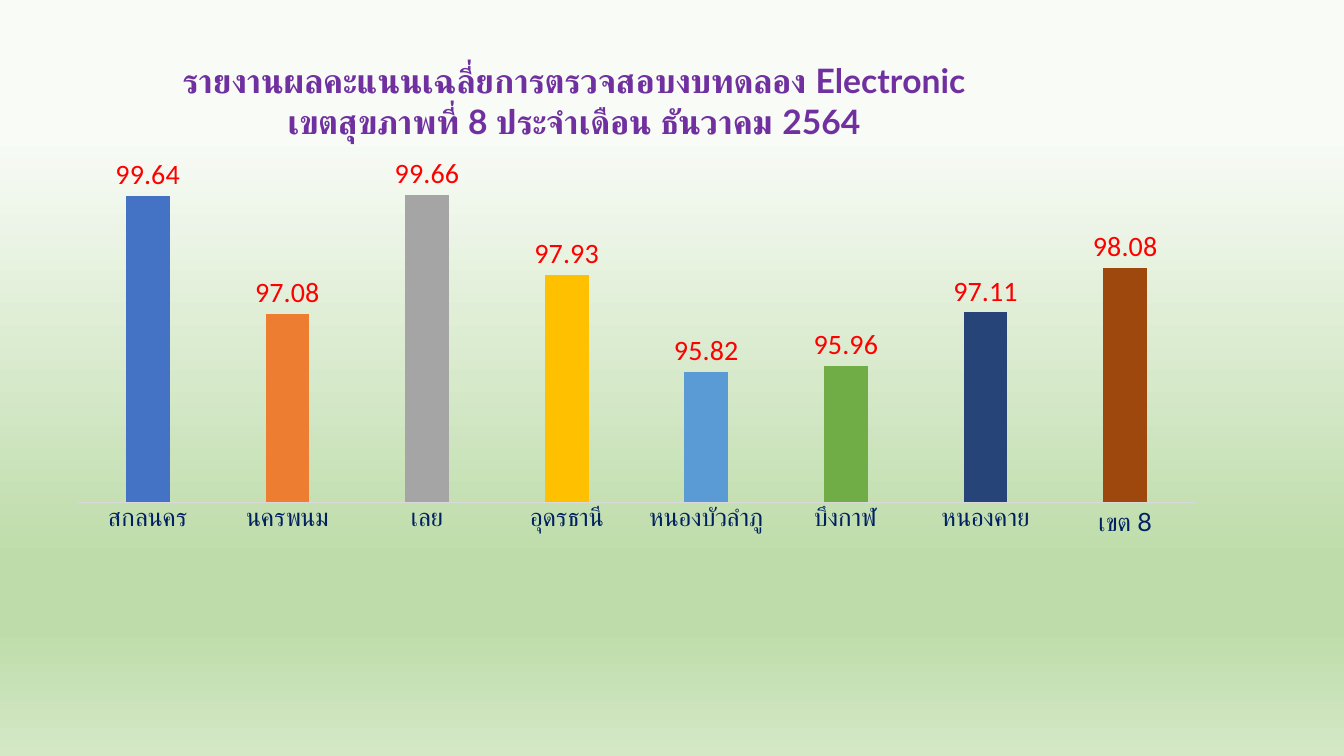
from lxml import etree
from pptx import Presentation
from pptx import util as u
from pptx.chart import data
from pptx.dml.color import RGBColor
from pptx.enum import chart as ch
from pptx.oxml import ns

PX = 9525  # 96 px to the inch

PURPLE = RGBColor(0x70, 0x30, 0xA0)
NAVY = RGBColor(0x00, 0x20, 0x60)
RED = RGBColor(0xFF, 0x00, 0x00)
GREY = RGBColor(0xD9, 0xD9, 0xD9)
BLACK = RGBColor(0x00, 0x00, 0x00)

# Position in %, colour, opacity in %
STOPS = [
    (18, RGBColor(0xF8, 0xFB, 0xF6), 25),
    (74, RGBColor(0xBE, 0xDC, 0xAA), 100),
    (83, RGBColor(0xBE, 0xDC, 0xAA), 100),
    (100, RGBColor(0xD4, 0xE8, 0xC6), 100),
]

TITLE = [
    "รายงานผลคะแนนเฉลี่ยการตรวจสอบงบทดลอง Electronic",
    "เขตสุขภาพที่ 8 ประจำเดือน ธันวาคม 2564",
]

# Province, mean score, bar colour
SCORES = [
    ("สกลนคร", 99.64, RGBColor(0x44, 0x72, 0xC4)),
    ("นครพนม", 97.08, RGBColor(0xED, 0x7D, 0x31)),
    ("เลย", 99.66, RGBColor(0xA5, 0xA5, 0xA5)),
    ("อุดรธานี", 97.93, RGBColor(0xFF, 0xC0, 0x00)),
    ("หนองบัวลำภู", 95.82, RGBColor(0x5B, 0x9B, 0xD5)),
    ("บึงกาฬ", 95.96, RGBColor(0x70, 0xAD, 0x47)),
    ("หนองคาย", 97.11, RGBColor(0x26, 0x44, 0x78)),
    ("เขต 8", 98.08, RGBColor(0x9E, 0x48, 0x0E)),
]


def put(item, **values):
    for name, value in values.items():
        setattr(item, name, value)


def style(font, color, **values):
    put(font, **values)
    font.color.rgb = color


def add(parent, tag, **values):
    return etree.SubElement(parent, ns.qn(tag), values)


def paint(slide):
    """Fill the background with the stops, from top to bottom."""
    fill = slide.background.fill
    fill.gradient()
    fill.gradient_angle = 270
    stops = slide.element.find(".//" + ns.qn("a:gsLst"))
    for stop in list(stops):
        stops.remove(stop)
    for place, color, alpha in STOPS:
        stop = add(stops, "a:gs", pos=str(place * 1000))
        tint = add(stop, "a:srgbClr", val=str(color))
        if alpha < 100:
            add(tint, "a:alpha", val=str(alpha * 1000))


def place(parent, index, **values):
    """Give a chart part a manual layout in fractions of the chart."""
    old = parent.find(ns.qn("c:layout"))
    if old is not None:
        parent.remove(old)
    layout = etree.Element(ns.qn("c:layout"))
    manual = add(layout, "c:manualLayout")
    for name, value in values.items():
        add(manual, "c:" + name, val=str(value))
    parent.insert(index, layout)


def add_bars(slide, left, top, width, height):
    table = data.CategoryChartData(number_format="0.00")
    table.categories = [name for name, _, _ in SCORES]
    table.add_series("Series 1", [score for _, score, _ in SCORES])
    frame = slide.shapes.add_chart(
        ch.XL_CHART_TYPE.COLUMN_CLUSTERED,
        left * PX, top * PX, width * PX, height * PX, table)
    chart = frame.chart
    chart.has_legend = False
    style(chart.font, BLACK, name="Calibri", size=u.Pt(10))
    return chart


def set_title(chart):
    chart.has_title = True
    frame = chart.chart_title.text_frame
    frame.text = "\n".join(TITLE)
    for line in frame.paragraphs:
        for run in line.runs:
            style(run.font, PURPLE, name="Lato", size=u.Pt(24), bold=True)


def set_axes(chart):
    axis = chart.category_axis
    put(axis, major_tick_mark=ch.XL_TICK_MARK.NONE,
        minor_tick_mark=ch.XL_TICK_MARK.NONE)
    style(axis.tick_labels.font, NAVY, name="Lato", size=u.Pt(18))
    axis.format.line.color.rgb = GREY
    axis.format.line.width = u.Pt(0.75)
    put(chart.value_axis, minimum_scale=93, maximum_scale=100,
        has_major_gridlines=False, visible=False)


def set_bars(chart):
    plot = chart.plots[0]
    put(plot, gap_width=219, overlap=-27, vary_by_categories=False)
    bars = plot.series[0]
    for i, (_, _, color) in enumerate(SCORES):
        fill = bars.points[i].format.fill
        fill.solid()
        fill.fore_color.rgb = color
    labels = bars.data_labels
    put(labels, show_value=True, number_format="0.00",
        number_format_is_linked=False,
        position=ch.XL_LABEL_POSITION.OUTSIDE_END)
    style(labels.font, RED, name="Calibri", size=u.Pt(20))


def main():
    deck = Presentation()
    put(deck, slide_width=1280 * PX, slide_height=720 * PX)
    slide = deck.slides.add_slide(deck.slide_layouts[6])
    paint(slide)

    # Score chart
    chart = add_bars(slide, 38, 33, 1209, 655)
    set_title(chart)
    set_axes(chart)
    set_bars(chart)

    # Title and plot positions
    root = chart.element
    place(root.find(".//" + ns.qn("c:title")), 1,
          xMode="edge", yMode="edge", x=0.11, y=0.03)
    place(root.find(".//" + ns.qn("c:plotArea")), 0,
          layoutTarget="inner", xMode="edge", yMode="edge",
          x=0.03, y=0.21, w=0.88, h=0.47)

    deck.save("out.pptx")


if __name__ == "__main__":
    main()
